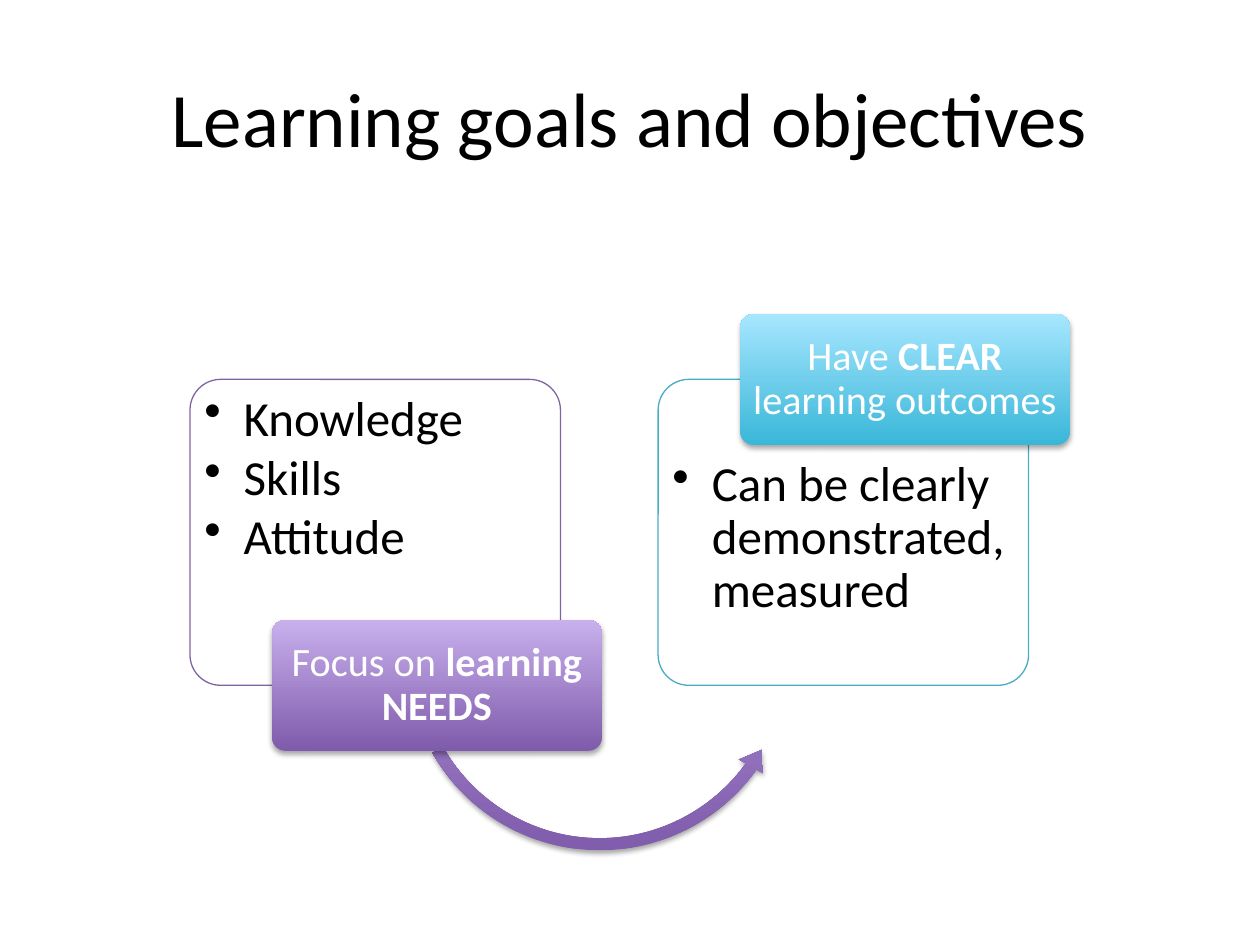
"""Build a slide that links learning needs to clear learning outcomes."""
from dataclasses import dataclass

from lxml.etree import SubElement
from pptx import Presentation
from pptx.dml.color import RGBColor
from pptx.enum.shapes import MSO_SHAPE
from pptx.enum.text import MSO_ANCHOR, PP_ALIGN
from pptx.oxml.ns import qn
from pptx.shapes.autoshape import Shape
from pptx.slide import Slide
from pptx.text.text import TextFrame, _Paragraph
from pptx.util import Pt


@dataclass(frozen=True)
class Theme:
    font: str = "Calibri"
    title_size: float = 44
    bullet_size: float = 28
    label_size: float = 23
    text: str = "000000"
    panel: str = "FFFFFF"
    label_text: str = "FFFFFF"
    shadow: str = "000000"
    purple: tuple[str, str, str] = ("8064A2", "7F5BAB", "C8B0ED")
    aqua: tuple[str, str, str] = ("4BACC6", "39B7D8", "A7E6FF")


@dataclass(frozen=True)
class Box:
    left: float
    top: float
    width: float
    height: float

    def lengths(self) -> tuple[Pt, Pt, Pt, Pt]:
        """Return the four lengths for a new shape."""
        return Pt(self.left), Pt(self.top), Pt(self.width), Pt(self.height)

    def inset(self, margin: float) -> "Box":
        """Return the box reduced by a margin on each side."""
        return Box(self.left + margin, self.top + margin,
                   self.width - 2 * margin, self.height - 2 * margin)


@dataclass(frozen=True)
class Card:
    left: float
    label_top: float
    text_top: float
    colors: tuple[str, str, str]
    bullets: tuple[str, ...]
    label: tuple[tuple[str, bool], ...]


THEME = Theme()
PANEL_TOP, PANEL_WIDTH, PANEL_HEIGHT = 216.8, 211.7, 174.8
LABEL_OFFSET, LABEL_WIDTH, LABEL_HEIGHT = 47, 188.2, 74.9
CARDS = (
    Card(108.6, 354.2, 220.8, THEME.purple, ("Knowledge", "Skills", "Attitude"),
         (("Focus on ", False), ("learning NEEDS", True))),
    Card(376.1, 179.4, 258.2, THEME.aqua, ("Can be clearly demonstrated, measured",),
         (("Have ", False), ("CLEAR", True), (" learning outcomes", False))),
)
ARROW_BOX = Box(228.2, 261.4, 229, 229)
ARROW_PERCENTAGES = (3, 363.7, 2139.2, 9024.5, 3.5)


def add_text_frame(slide: Slide, box: Box, side: float, end: float,
                   anchor: MSO_ANCHOR) -> TextFrame:
    """Add a wrapping text box and return its text frame."""
    frame = slide.shapes.add_textbox(*box.lengths()).text_frame
    frame.word_wrap = True
    frame.vertical_anchor = anchor
    frame.margin_left = frame.margin_right = Pt(side)
    frame.margin_top = frame.margin_bottom = Pt(end)
    return frame


def format_runs(paragraph: _Paragraph, size: float, color: str) -> None:
    """Give every run of a paragraph the theme font, a size and a colour."""
    for run in paragraph.runs:
        run.font.name = THEME.font
        run.font.size = Pt(size)
        run.font.color.rgb = RGBColor.from_string(color)


def add_bullet(paragraph: _Paragraph) -> None:
    """Give a paragraph a round bullet with a hanging indent."""
    properties = paragraph._p.get_or_add_pPr()
    properties.set("marL", str(Pt(22.5)))
    properties.set("indent", str(-Pt(22.5)))
    SubElement(properties, qn("a:buChar"), char="•")


def style_raised(shape: Shape, dark: str, light: str) -> None:
    """Fill a shape with an upward gradient and cast a soft shadow below it."""
    shape.line.fill.background()
    shape.fill.gradient()
    shape.fill.gradient_angle = 90
    for stop, color in zip(shape.fill.gradient_stops, (dark, light)):
        stop.color.rgb = RGBColor.from_string(color)
    shape.shadow.inherit = False
    effects = shape._element.spPr.find(qn("a:effectLst"))
    shadow = SubElement(effects, qn("a:outerShdw"), blurRad=str(Pt(3.1)),
                        dist=str(Pt(1.8)), dir="5400000", rotWithShape="0")
    color = SubElement(shadow, qn("a:srgbClr"), val=THEME.shadow)
    SubElement(color, qn("a:alpha"), val="35000")


def add_rounded(slide: Slide, box: Box) -> Shape:
    """Add a rectangle with slightly rounded corners."""
    shape = slide.shapes.add_shape(MSO_SHAPE.ROUNDED_RECTANGLE, *box.lengths())
    shape.adjustments[0] = 0.1
    return shape


def add_panel(slide: Slide, box: Box, outline: str) -> None:
    """Add an outlined, nearly opaque panel."""
    panel = add_rounded(slide, box)
    panel.shadow.inherit = False
    panel.fill.solid()
    panel.fill.fore_color.rgb = RGBColor.from_string(THEME.panel)
    color = panel._element.spPr.find(qn("a:solidFill"))[0]
    SubElement(color, qn("a:alpha"), val="90000")
    panel.line.color.rgb = RGBColor.from_string(outline)
    panel.line.width = Pt(0.75)


def add_card(slide: Slide, card: Card) -> None:
    """Add a panel with its bullets and its overlapping label."""
    outline, dark, light = card.colors
    add_panel(slide, Box(card.left, PANEL_TOP, PANEL_WIDTH, PANEL_HEIGHT), outline)

    text_box = Box(card.left + 4, card.text_top, PANEL_WIDTH - 8, 129)
    frame = add_text_frame(slide, text_box, 4.2, 4.2, MSO_ANCHOR.TOP)
    frame.text = "\n".join(card.bullets)
    for paragraph in frame.paragraphs:
        paragraph.line_spacing = 0.9
        paragraph.space_after = Pt(3.6)
        add_bullet(paragraph)
        format_runs(paragraph, THEME.bullet_size, THEME.text)

    label_box = Box(card.left + LABEL_OFFSET, card.label_top, LABEL_WIDTH, LABEL_HEIGHT)
    style_raised(add_rounded(slide, label_box), dark, light)
    frame = add_text_frame(slide, label_box.inset(2.2), 3.5, 2.3, MSO_ANCHOR.MIDDLE)
    paragraph = frame.paragraphs[0]
    paragraph.alignment = PP_ALIGN.CENTER
    paragraph.line_spacing = 0.9
    for text, bold in card.label:
        run = paragraph.add_run()
        run.text = text
        run.font.bold = bold
    format_runs(paragraph, THEME.label_size, THEME.label_text)


def add_title(slide: Slide, text: str) -> None:
    """Add the centred slide title."""
    frame = add_text_frame(slide, Box(36, 21.6, 648, 90), 7.2, 3.6, MSO_ANCHOR.MIDDLE)
    frame.text = text
    frame.paragraphs[0].alignment = PP_ALIGN.CENTER
    format_runs(frame.paragraphs[0], THEME.title_size, THEME.text)


def add_arrow(slide: Slide) -> None:
    """Add the curved arrow leading from the first card to the second."""
    arrow = slide.shapes.add_shape(MSO_SHAPE.LEFT_CIRCULAR_ARROW, *ARROW_BOX.lengths())
    for index, percentage in enumerate(ARROW_PERCENTAGES):
        arrow.adjustments[index] = percentage / 100
    style_raised(arrow, *THEME.purple[1:])


def main() -> None:
    """Build and save the presentation."""
    presentation = Presentation()
    presentation.slide_width, presentation.slide_height = Pt(720), Pt(540)
    slide = presentation.slides.add_slide(presentation.slide_layouts[6])
    add_title(slide, "Learning goals and objectives")
    add_arrow(slide)
    for card in CARDS:
        add_card(slide, card)
    presentation.save("out.pptx")


if __name__ == "__main__":
    main()
